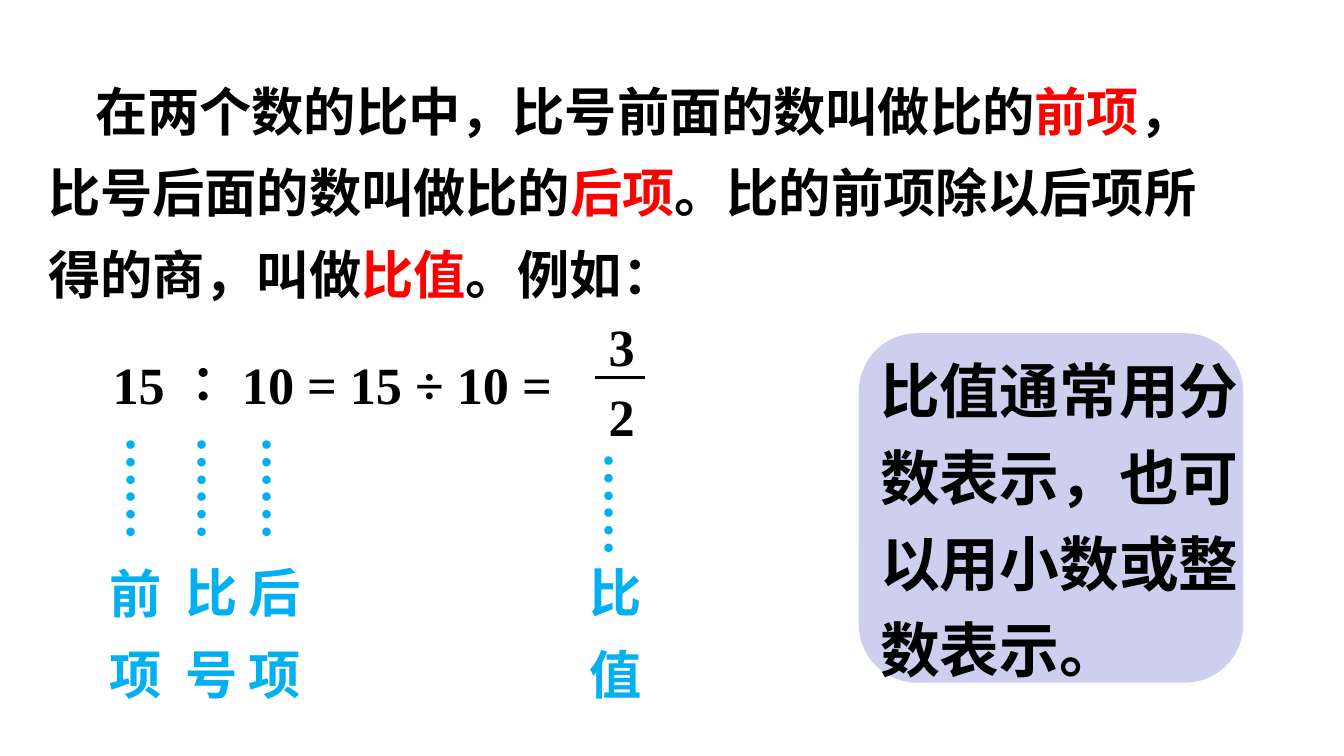
from dataclasses import dataclass

from lxml.etree import SubElement
from pptx import Presentation
from pptx.dml.color import RGBColor
from pptx.enum.shapes import MSO_CONNECTOR, MSO_SHAPE
from pptx.enum.text import MSO_AUTO_SIZE as AutoSize
from pptx.oxml.ns import qn
from pptx.util import Emu, Inches, Pt

COLORS = {"ink": "000000", "key": "FF0000", "label": "00B0F0", "panel": "CECEEF"}
HAN, LATIN = "Noto Sans CJK SC", "Times New Roman"

deck = Presentation()
deck.slide_width = Inches(10)
deck.slide_height = Emu(deck.slide_width * 9 // 16)
COLUMN = deck.slide_width / 100
ROW = deck.slide_height / 56.25
slide = deck.slides.add_slide(deck.slide_layouts[6])


@dataclass(frozen=True)
class Area:
    """Place on the slide, in grid columns and rows."""
    left: float
    top: float
    width: float
    height: float

    def emu(self) -> tuple[Emu, ...]:
        return (Emu(round(self.left * COLUMN)), Emu(round(self.top * ROW)),
                Emu(round(self.width * COLUMN)), Emu(round(self.height * ROW)))


@dataclass(frozen=True)
class Span:
    text: str
    color: str = "ink"
    font: str = HAN


@dataclass(frozen=True)
class Line:
    spans: tuple[Span, ...]
    spacing: float
    indent: float = 0


@dataclass(frozen=True)
class Term:
    """A part of the ratio: dotted leader above a vertical label."""
    dots: Area
    dots_spacing: float
    label: Area
    lines: tuple[tuple[str, float], ...]
    font: str = LATIN


def rgb(name: str) -> RGBColor:
    return RGBColor.from_string(COLORS[name])


def write(area: Area, *lines: Line, size: float = 28, rotation: float = 0) -> None:
    box = slide.shapes.add_textbox(*area.emu())
    box.rotation = rotation
    frame = box.text_frame
    frame.word_wrap = True
    frame.auto_size = AutoSize.SHAPE_TO_FIT_TEXT
    for number, line in enumerate(lines):
        paragraph = frame.paragraphs[0] if number == 0 else frame.add_paragraph()
        paragraph.line_spacing = line.spacing
        if line.indent:
            paragraph._p.get_or_add_pPr().set("indent", str(round(line.indent * COLUMN)))
        for span in line.spans:
            run = paragraph.add_run()
            run.text = span.text
            run.font.size, run.font.bold = Pt(size), True
            run.font.name = span.font
            run.font.color.rgb = rgb(span.color)
            SubElement(run._r.rPr, qn("a:ea")).set("typeface", HAN)


def draw_fraction_bar(left: float, right: float, row: float) -> None:
    y = round(row * ROW)
    bar = slide.shapes.add_connector(
        MSO_CONNECTOR.STRAIGHT, round(left * COLUMN), y, round(right * COLUMN), y)
    bar.line.color.rgb = rgb("ink")
    bar.line.width = Pt(1.75)
    SubElement(bar._element.spPr, qn("a:effectLst"))


def draw_term(term: Term) -> None:
    write(term.dots, Line((Span("……", "label", LATIN),), term.dots_spacing), rotation=90)
    write(term.label, *(Line((Span(text, "label", term.font),), spacing)
                        for text, spacing in term.lines))


def draw_panel(area: Area) -> None:
    panel = slide.shapes.add_shape(MSO_SHAPE.FLOWCHART_ALTERNATE_PROCESS, *area.emu())
    panel.shadow.inherit = False
    panel.fill.solid()
    panel.fill.fore_color.rgb = rgb("panel")
    panel.line.fill.background()


EQUATION = (Span("15 ", font=LATIN), Span("∶ "), Span("10 = 15 ÷ 10 =", font=LATIN))
FRACTION = (
    ("3", Area(44.3, 23.4, 3.1, 5.2)),
    ("2", Area(44.3, 28.6, 3.9, 5.1)),
)
TERMS = (
    Term(Area(6.8, 32.8, 10.7, 8.1), 1.5, Area(7.2, 38.9, 6.3, 14.2),
         (("前", 1.5), ("项", 1.3)), HAN),
    Term(Area(11.8, 33.1, 9.9, 6.7), 1.2, Area(12.8, 39.8, 5.6, 13.2), (("比号", 1.3),)),
    Term(Area(15.8, 33.9, 12.9, 8.1), 1.5, Area(17.5, 39.8, 6.9, 13.2), (("后项", 1.3),)),
    Term(Area(42.6, 33.8, 10.3, 8.1), 1.5, Area(42.9, 39.8, 6, 13.2), (("比值", 1.3),)),
)
DEFINITION = (
    Span("在两个数的比中，比号前面的数叫做比的"), Span("前项", "key"),
    Span("，比号后面的数叫做比的"), Span("后项", "key"),
    Span("。比的前项除以后项所得的商，叫做"), Span("比值", "key"),
    Span("。例如："),
)
REMARK = Span("比值通常用分数表示，也可以用小数或整数表示。")

write(Area(7.4, 23.4, 81.4, 8.1), Line(EQUATION, 1.5))
for digit, place in FRACTION:
    write(place, Line((Span(digit, font=LATIN),), 0.9))
draw_fraction_bar(44.3, 48, 28.1)
for ratio_term in TERMS:
    draw_term(ratio_term)
write(Area(2.6, 4, 90.4, 19.4), Line(DEFINITION, 1.3, indent=3.5))
draw_panel(Area(63.9, 24.8, 28.6, 26))
write(Area(64.5, 24.8, 29.8, 26.8), Line((REMARK,), 1.2), size=32)

deck.save("out.pptx")
